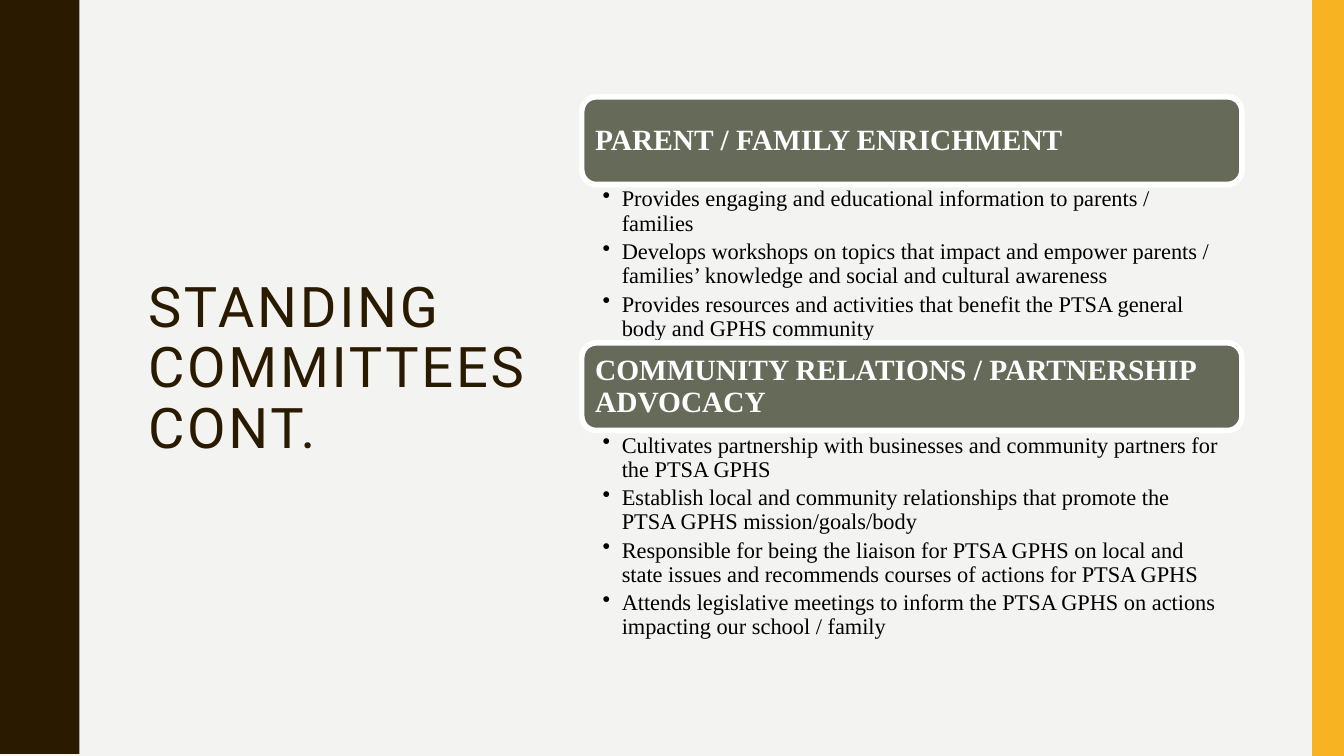
from lxml.etree import SubElement
from pptx import Presentation
from pptx.dml.color import RGBColor
from pptx.enum.shapes import MSO_SHAPE as Shape
from pptx.enum.text import MSO_ANCHOR as Anchor, MSO_AUTO_SIZE as Fit, PP_ALIGN as Align
from pptx.oxml.ns import qn
from pptx.util import Cm, Pt

PAPER = RGBColor(0xF3, 0xF3, 0xF2)
BROWN = RGBColor(0x2A, 0x1A, 0x00)
GOLD = RGBColor(0xF8, 0xB3, 0x23)
OLIVE = RGBColor(0x65, 0x6A, 0x59)
WHITE = RGBColor(0xFF, 0xFF, 0xFF)
BLACK = RGBColor(0x00, 0x00, 0x00)

WIDE, HIGH = 33.87, 19.05
LEFT, SPAN, BAND = 14.66, 16.64, 2.21
WAVES = 5
# Upper quarter of one wave, as (x, y) in cm
CURVE = [(1.98, 0), (1.98, 0.18), (2.01, 0.36), (2.03, 0.51),
         (2.06, 0.64), (2.11, 0.74), (2.16, 0.84)]
GROUPS = [
    ("PARENT / FAMILY ENRICHMENT", 3.99, [
        "Provides engaging and educational information to parents / families",
        "Develops workshops on topics that impact and empower parents / "
        "families’ knowledge and social and cultural awareness",
        "Provides resources and activities that benefit the PTSA general "
        "body and GPHS community"]),
    ("COMMUNITY RELATIONS / PARTNERSHIP ADVOCACY", 5.31, [
        "Cultivates partnership with businesses and community partners for "
        "the PTSA GPHS",
        "Establish local and community relationships that promote the PTSA "
        "GPHS mission/goals/body",
        "Responsible for being the liaison for PTSA GPHS on local and state "
        "issues and recommends courses of actions for PTSA GPHS",
        "Attends legislative meetings to inform the PTSA GPHS on actions "
        "impacting our school / family"]),
]


def write(shape, lines, size, color, font="Times New Roman", bold=False,
          anchor=Anchor.TOP, inset=(0.25, 0.13, 0.25, 0.13), after=0,
          bullet=False, track=0):
    frame = shape.text_frame
    frame.word_wrap = True
    frame.auto_size = Fit.NONE
    frame.vertical_anchor = anchor
    (frame.margin_left, frame.margin_top,
     frame.margin_right, frame.margin_bottom) = map(Cm, inset)
    for i, line in enumerate(lines):
        para = frame.add_paragraph() if i else frame.paragraphs[0]
        para.alignment = Align.LEFT
        para.line_spacing = 0.9
        para.space_before, para.space_after = Pt(0), Pt(after)
        run = para.add_run()
        run.text = line
        run.font.name, run.font.size, run.font.bold = font, Pt(size), bold
        run.font.color.rgb = color
        if track:
            run.font._element.set("spc", str(track * 100))
        if bullet:
            props = para._p.get_or_add_pPr()
            props.set("marL", str(Cm(0.48)))
            props.set("indent", str(-Cm(0.48)))
            SubElement(props, qn("a:buChar")).set("char", "•")


def paint(shape, fill, line=None):
    shape.shadow.inherit = False
    shape.fill.solid()
    shape.fill.fore_color.rgb = fill
    if line is None:
        shape.line.fill.background()
    else:
        shape.line.color.rgb = line
        shape.line.width = Pt(4)


def block(slide, kind, box, fill, line=None):
    shape = slide.shapes.add_shape(kind, *map(Cm, box))
    paint(shape, fill, line)
    return shape


def wave(slide):
    step = HIGH / WAVES
    # Turn the quarter about its end, then mirror the half
    half = CURVE + [(2.22, step / 4)]
    half += [(4.44 - x, step / 2 - y) for x, y in reversed(CURVE)]
    full = half + [(x, step - y) for x, y in reversed(half[:-1])]
    edge = [(x, y + n * step) for n in range(WAVES) for x, y in full]
    path = slide.shapes.build_freeform(0, 0, scale=Cm(1))
    path.add_line_segments(edge + [(0, HIGH)], close=True)
    paint(path.convert_to_shape(), BROWN)


def group(slide, top, head, tall, items):
    band = block(slide, Shape.ROUNDED_RECTANGLE, (LEFT, top, SPAN, BAND),
                 OLIVE, WHITE)
    write(band, [head], 21, WHITE, bold=True, anchor=Anchor.MIDDLE,
          inset=(0.23,) * 4)
    body = slide.shapes.add_textbox(*map(Cm, (LEFT, top + BAND, SPAN, tall)))
    write(body, items, 16, BLACK, inset=(0.53, 0.08, 0.41, 0.08),
          after=3, bullet=True)


def main():
    deck = Presentation()
    deck.slide_width, deck.slide_height = Cm(WIDE), Cm(HIGH)
    slide = deck.slides.add_slide(deck.slide_layouts[5])
    slide.background.fill.solid()
    slide.background.fill.fore_color.rgb = PAPER

    # Side decoration
    wave(slide)
    block(slide, Shape.RECTANGLE, (33.07, 0, 0.8, HIGH), GOLD)

    # Title
    title = slide.shapes.title
    title.left, title.top, title.width, title.height = map(
        Cm, (3.48, 1.83, 11.2, 14.96))
    write(title, ["STANDING COMMITTEES CONT."], 40, BROWN, font="Roboto",
          anchor=Anchor.MIDDLE, track=2)

    # Committees, stacked without gaps
    top = 2.44
    for head, tall, items in GROUPS:
        group(slide, top, head, tall, items)
        top += BAND + tall

    deck.save("out.pptx")


if __name__ == "__main__":
    main()
